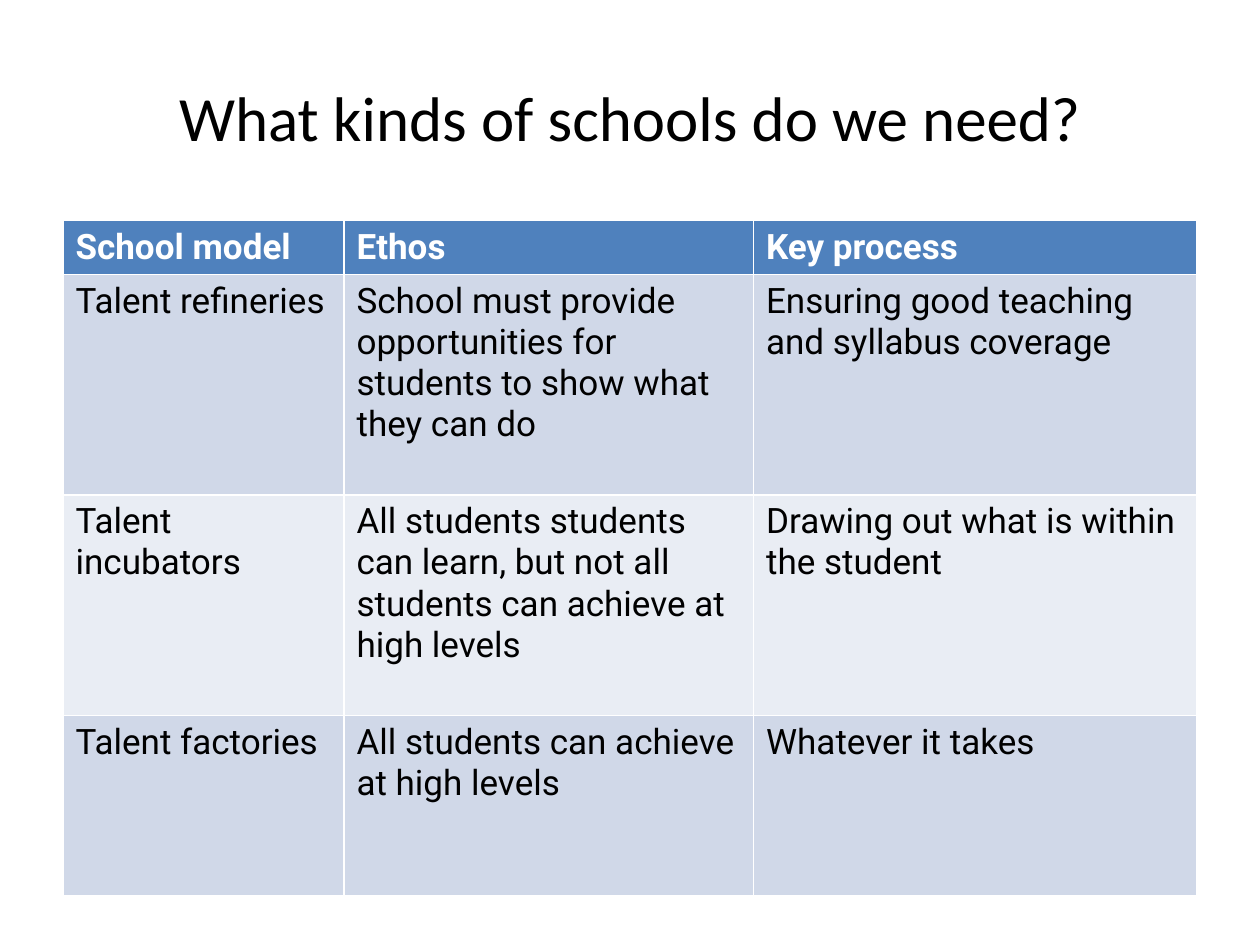
from pptx import Presentation
from pptx.dml.color import RGBColor
from pptx.enum.text import MSO_ANCHOR, PP_ALIGN
from pptx.util import Inches, Pt

# Content
TITLE = "What kinds of schools do we need?"
ROWS = [
    ("School model", "Ethos", "Key process"),
    ("Talent refineries",
     "School must provide opportunities for students to show what they can do",
     "Ensuring good teaching and syllabus coverage"),
    ("Talent incubators",
     "All students students can learn, but not all students can achieve at high levels",
     "Drawing out what is within the student"),
    ("Talent factories",
     "All students can achieve at high levels",
     "Whatever it takes"),
]
WIDTHS = [2.23, 3.25, 3.52]
HEIGHTS = [0.42, 1.75, 1.75, 1.43]

# Colours
BLACK = RGBColor(0x00, 0x00, 0x00)
WHITE = RGBColor(0xFF, 0xFF, 0xFF)
BLUE = RGBColor(0x4F, 0x81, 0xBD)
BANDS = [RGBColor(0xE9, 0xED, 0xF4), RGBColor(0xD0, 0xD8, 0xE8)]


def style(para, face, size, color, bold=False):
    for run in para.runs:
        font = run.font
        font.name, font.size, font.bold = face, Pt(size), bold
        font.color.rgb = color


def main():
    deck = Presentation()
    deck.slide_width, deck.slide_height = Inches(10), Inches(7.5)
    slide = deck.slides.add_slide(deck.slide_layouts[5])

    # Title
    title = slide.shapes.title
    title.left, title.top = Inches(0.5), Inches(0.3)
    title.width, title.height = Inches(9), Inches(1.25)
    frame = title.text_frame
    frame.text = TITLE
    frame.vertical_anchor = MSO_ANCHOR.MIDDLE
    para = frame.paragraphs[0]
    para.alignment = PP_ALIGN.CENTER
    style(para, "Calibri", 36, BLACK)

    # Table: the default style draws the white borders
    table = slide.shapes.add_table(
        len(ROWS), len(WIDTHS), Inches(0.5), Inches(1.75),
        Inches(sum(WIDTHS)), Inches(sum(HEIGHTS))).table
    for col, width in zip(table.columns, WIDTHS):
        col.width = Inches(width)
    for r, (row, height) in enumerate(zip(ROWS, HEIGHTS)):
        table.rows[r].height = Inches(height)
        head = r == 0
        for c, text in enumerate(row):
            cell = table.cell(r, c)
            cell.fill.solid()
            cell.fill.fore_color.rgb = BLUE if head else BANDS[r % 2]
            cell.text_frame.text = text
            style(cell.text_frame.paragraphs[0], "Roboto", 20,
                  WHITE if head else BLACK, head)

    deck.save("out.pptx")


if __name__ == "__main__":
    main()
